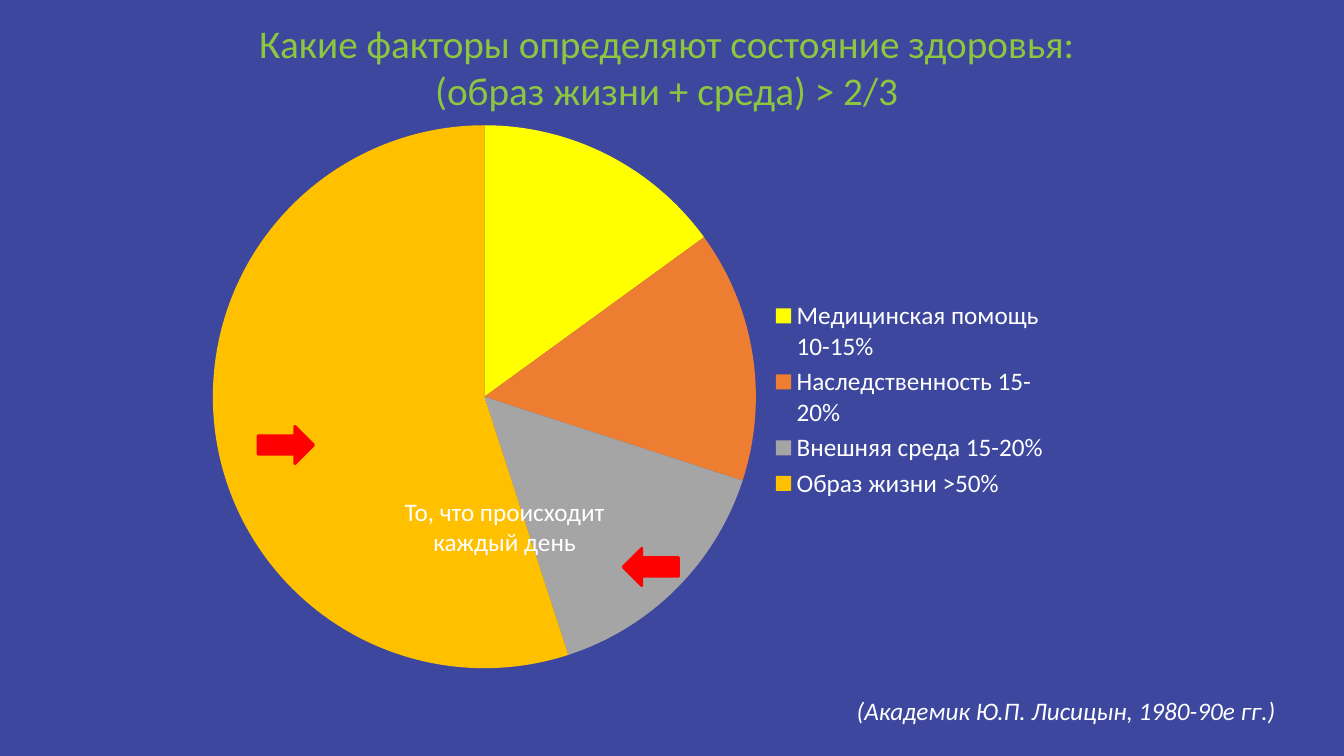
from dataclasses import dataclass

from lxml import etree
from pptx import Presentation
from pptx.chart.data import CategoryChartData
from pptx.dml.color import RGBColor
from pptx.enum.chart import XL_CHART_TYPE, XL_LEGEND_POSITION
from pptx.enum.shapes import MSO_SHAPE
from pptx.enum.text import PP_ALIGN
from pptx.oxml.ns import qn
from pptx.util import Inches, Pt

PIE = XL_CHART_TYPE.PIE
LEGEND_RIGHT = XL_LEGEND_POSITION.RIGHT
LEFT_ARROW = MSO_SHAPE.LEFT_ARROW
RIGHT_ARROW = MSO_SHAPE.RIGHT_ARROW
CENTER = PP_ALIGN.CENTER


@dataclass(frozen=True)
class Theme:
    font: str = "Calibri"
    background: str = "3C479D"
    title: str = "8DC63F"
    text: str = "FFFFFF"
    arrow: str = "FF0000"
    title_size: int = 28
    body_size: int = 18


THEME = Theme()

FACTORS = [
    ("Медицинская помощь 10-15%", 15, "FFFF00"),
    ("Наследственность 15-20%", 15, "ED7D31"),
    ("Внешняя среда 15-20%", 15, "A5A5A5"),
    ("Образ жизни >50%", 55, "FFC000"),
]


def rgb(value):
    return RGBColor.from_string(value)


def style_font(font, size, color):
    font.name = THEME.font
    font.size = Pt(size)
    font.color.rgb = rgb(color)


def add_text(s, box, lines, size=THEME.body_size, color=THEME.text, italic=False):
    tf = s.shapes.add_textbox(*map(Inches, box)).text_frame
    tf.word_wrap = True
    p = tf.paragraphs[0]
    p.alignment = CENTER
    for i, line in enumerate(lines):
        if i:
            p.add_line_break()
        r = p.add_run()
        r.text = line
        style_font(r.font, size, color)
        r.font.italic = italic


def add_arrow(s, kind, left, top):
    sp = s.shapes.add_shape(kind, Inches(left), Inches(top), Inches(0.55), Inches(0.37))
    sp.shadow.inherit = False
    sp.fill.solid()
    sp.fill.fore_color.rgb = rgb(THEME.arrow)
    sp.line.color.rgb = rgb(THEME.arrow)
    sp.line.width = Pt(2)


def place_plot(chart, **fractions):
    plot_area = chart._chartSpace.chart.plotArea
    for old in plot_area.findall(qn("c:layout")):
        plot_area.remove(old)
    layout = etree.Element(qn("c:layout"))
    manual = etree.SubElement(layout, qn("c:manualLayout"))
    settings = {"layoutTarget": "inner", "xMode": "edge", "yMode": "edge", **fractions}
    for name, value in settings.items():
        etree.SubElement(manual, qn(f"c:{name}")).set("val", str(value))
    plot_area.insert(0, layout)


def add_pie(s, box, factors):
    names, values, colors = zip(*factors)
    data = CategoryChartData()
    data.categories = names
    data.add_series("Series 1", values)
    chart = s.shapes.add_chart(PIE, *map(Inches, box), data).chart
    chart.has_title = False
    chart.has_legend = True
    chart.legend.position = LEGEND_RIGHT
    chart.legend.include_in_layout = False
    style_font(chart.font, THEME.body_size, THEME.text)
    style_font(chart.legend.font, THEME.body_size, THEME.text)
    plot = chart.plots[0]
    plot.vary_by_categories = True
    for i, color in enumerate(colors):
        fmt = plot.series[0].points[i].format
        fmt.fill.solid()
        fmt.fill.fore_color.rgb = rgb(color)
        fmt.line.fill.background()
    place_plot(chart, x=0.02, y=0.02, w=0.63, h=0.95)


def main():
    prs = Presentation()
    prs.slide_width, prs.slide_height = Inches(13.33), Inches(7.5)
    s = prs.slides.add_slide(prs.slide_layouts[6])
    s.background.fill.solid()
    s.background.fill.fore_color.rgb = rgb(THEME.background)

    title = ["Какие факторы определяют состояние здоровья: ", "(образ жизни + среда) > 2/3 "]
    add_text(s, (0.23, 0.14, 12.85, 1.04), title, THEME.title_size, THEME.title)
    add_pie(s, (1.93, 1.13, 8.58, 5.67), FACTORS)
    add_arrow(s, RIGHT_ARROW, 2.56, 4.23)
    add_arrow(s, LEFT_ARROW, 6.18, 5.44)
    add_text(s, (8.23, 6.85, 4.69, 0.4), ["(Академик Ю.П. Лисицын, 1980-90е гг.)"], italic=True)
    add_text(s, (3.59, 4.87, 2.83, 0.71), ["То, что происходит каждый день"])
    prs.save("out.pptx")


if __name__ == "__main__":
    main()
